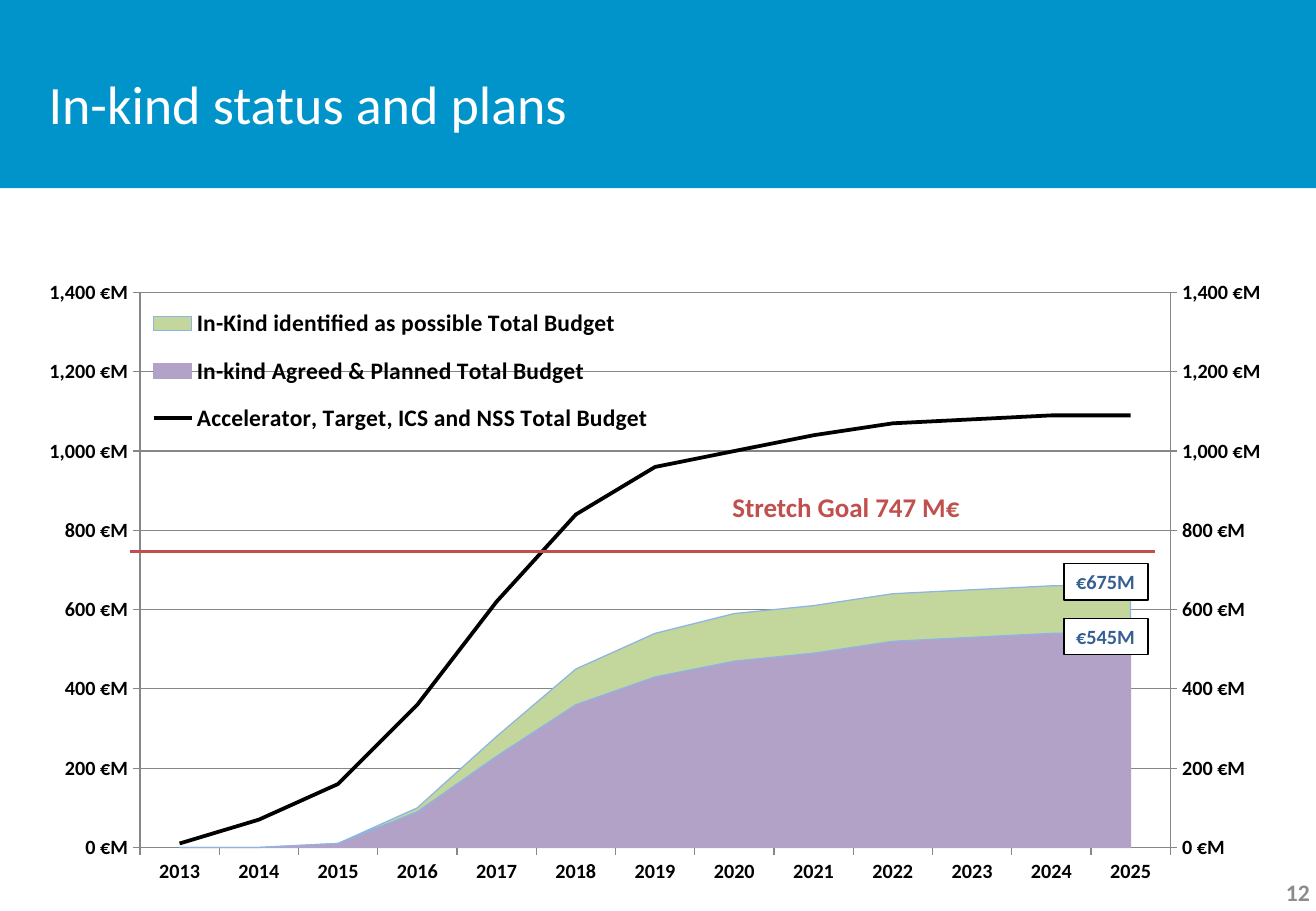
import copy
from dataclasses import dataclass

import pptx
import pptx.chart.data
import pptx.dml.color
import pptx.enum.chart
import pptx.enum.shapes
import pptx.enum.text
import pptx.oxml
import pptx.oxml.ns
import pptx.util

Pt = pptx.util.Pt
Align = pptx.enum.text.PP_ALIGN
Anchor = pptx.enum.text.MSO_ANCHOR
Box = tuple[float, float, float, float]


@dataclass(frozen=True)
class Theme:
    font: str = "Calibri"
    band: str = "0094CA"
    white: str = "FFFFFF"
    black: str = "000000"
    grid: str = "868686"
    number: str = "8C8C8C"
    goal: str = "C0504D"
    label: str = "376092"
    agreed: str = "B3A2C7"
    possible: str = "C3D69B"
    possible_edge: str = "8EB4E3"
    title_size: float = 32
    goal_size: float = 16
    legend_size: float = 14
    small_size: float = 12


THEME = Theme()


@dataclass(frozen=True)
class Note:
    text: str
    box: Box
    size: float
    color: str
    align: Align = Align.LEFT
    anchor: Anchor = Anchor.TOP
    framed: bool = False


@dataclass(frozen=True)
class BudgetSeries:
    name: str
    values: tuple[float | None, ...]
    color: str
    edge: str
    width: float


NOTES = (
    Note("€675M", (630.7, 334.1, 49.7, 21.6), THEME.small_size, THEME.label, framed=True),
    Note("€545M", (630.7, 366.5, 49.7, 21.6), THEME.small_size, THEME.label, framed=True),
    Note("Stretch Goal 747 M€", (427, 287.3, 151.2, 26.6), THEME.goal_size, THEME.goal),
    Note("12", (601.2, 514.1, 182.2, 28.8), THEME.legend_size, THEME.number,
         Align.RIGHT, Anchor.MIDDLE),
)
SERIES = (
    BudgetSeries("In-kind Agreed & Planned Total Budget",
                 (None, 0, 10, 90, 230, 360, 430, 470, 490, 520, 530, 540, 540),
                 THEME.agreed, THEME.agreed, 0.75),
    BudgetSeries("In-Kind identified as possible Total Budget",
                 (None, 0, 0, 10, 50, 90, 110, 120, 120, 120, 120, 120, 120),
                 THEME.possible, THEME.possible_edge, 0.75),
    BudgetSeries("Accelerator, Target, ICS and NSS Total Budget",
                 (10, 70, 160, 360, 620, 840, 960, 1000, 1040, 1070, 1080, 1090, 1090),
                 THEME.black, THEME.black, 2.25),
)


def rgb(color: str) -> pptx.dml.color.RGBColor:
    return pptx.dml.color.RGBColor.from_string(color)


def set_font(font, size: float, color: str, bold: bool = True) -> None:
    font.name, font.size, font.bold = THEME.font, Pt(size), bold
    font.color.rgb = rgb(color)


def chart_xml(tag: str, content: str):
    namespaces = pptx.oxml.ns.nsdecls("c")
    return pptx.oxml.parse_xml(f"<c:{tag} {namespaces}>{content}</c:{tag}>")


def manual_layout(left: float, top: float, width: float, height: float, target: str = ""):
    sizes = f'<c:x val="{left}"/><c:y val="{top}"/><c:w val="{width}"/><c:h val="{height}"/>'
    modes = '<c:xMode val="edge"/><c:yMode val="edge"/>'
    return chart_xml("layout", f"<c:manualLayout>{target}{modes}{sizes}</c:manualLayout>")


def add_title(page) -> None:
    band = page.shapes.add_shape(pptx.enum.shapes.MSO_SHAPE.RECTANGLE, 0, 0, Pt(780), Pt(111.6))
    band.shadow.inherit = False
    band.fill.solid()
    band.fill.fore_color.rgb = rgb(THEME.band)
    band.line.fill.background()
    page.shapes.element.insert(2, band.element)  # behind the title

    title = page.shapes.title
    title.left, title.top, title.width, title.height = map(Pt, (21.6, 15.8, 609.1, 90))
    title.text_frame.text = "In-kind status and plans"
    title.text_frame.vertical_anchor = Anchor.MIDDLE
    para = title.text_frame.paragraphs[0]
    para.alignment = Align.LEFT
    set_font(para.font, THEME.title_size, THEME.white, bold=False)


def add_note(page, note: Note) -> None:
    box = page.shapes.add_textbox(*map(Pt, note.box))
    if note.framed:
        box.fill.solid()
        box.fill.fore_color.rgb = rgb(THEME.white)
        box.line.color.rgb = rgb(THEME.black)
        box.line.width = Pt(0.75)
    frame = box.text_frame
    frame.text = note.text
    frame.word_wrap = note.align == Align.RIGHT
    frame.vertical_anchor = note.anchor
    frame.paragraphs[0].alignment = note.align
    set_font(frame.paragraphs[0].font, note.size, note.color)


def add_goal_line(page) -> None:
    goal = page.shapes.add_connector(
        pptx.enum.shapes.MSO_CONNECTOR.STRAIGHT, *map(Pt, (77, 326.9, 684.7, 326.9)))
    goal.line.color.rgb = rgb(THEME.goal)
    goal.line.width = Pt(2)
    goal.element.spPr.append(
        pptx.oxml.parse_xml(f'<a:effectLst {pptx.oxml.ns.nsdecls("a")}/>'))


def style_axes(chart) -> None:
    values = chart.value_axis
    values.minimum_scale, values.maximum_scale, values.major_unit = 0, 1400, 200
    values.has_major_gridlines = True
    values.major_gridlines.format.line.color.rgb = rgb(THEME.grid)
    values.tick_labels.number_format = '#,##0\\ "€M"'
    values.tick_labels.number_format_is_linked = False
    for axis in (chart.category_axis, values):
        axis.major_tick_mark = pptx.enum.chart.XL_TICK_MARK.OUTSIDE
        axis.minor_tick_mark = pptx.enum.chart.XL_TICK_MARK.NONE
        axis.format.line.color.rgb = rgb(THEME.grid)
        set_font(axis.tick_labels.font, THEME.small_size, THEME.black)


def move_total_to_right_axis(chart) -> None:
    root = chart.element
    area = root.xpath(".//c:areaChart")[0]
    root.xpath(".//c:valAx/c:crossBetween")[0].set("val", "between")
    line = chart_xml("lineChart", '<c:grouping val="standard"/><c:varyColors val="0"/>'
                     '<c:marker val="1"/><c:axId val="5001"/><c:axId val="5002"/>')
    line.insert(2, area.xpath("./c:ser")[-1])
    area.addnext(line)

    # Second pair of axes: hidden categories and values on the right
    categories, values = root.xpath(".//c:catAx")[0], root.xpath(".//c:valAx")[0]
    hidden, right = copy.deepcopy(categories), copy.deepcopy(values)
    values.addnext(hidden)
    hidden.addnext(right)
    for axis, own, other in ((hidden, "5001", "5002"), (right, "5002", "5001")):
        axis.xpath("./c:axId")[0].set("val", own)
        axis.xpath("./c:crossAx")[0].set("val", other)
    hidden.xpath("./c:delete")[0].set("val", "1")
    right.remove(right.xpath("./c:majorGridlines")[0])
    right.xpath("./c:axPos")[0].set("val", "r")
    right.xpath("./c:crosses")[0].set("val", "max")


def add_budget_chart(page) -> None:
    data = pptx.chart.data.CategoryChartData()
    data.categories = [str(year) for year in range(2013, 2026)]
    for series in SERIES:
        data.add_series(series.name, series.values)
    chart = page.shapes.add_chart(pptx.enum.chart.XL_CHART_TYPE.AREA_STACKED,
                                  *map(Pt, (15.1, 116.6, 732.2, 430.6)), data).chart
    chart.has_title = False
    set_font(chart.font, THEME.small_size, THEME.black)
    style_axes(chart)
    move_total_to_right_axis(chart)

    # Series colours
    areas, lines = chart.plots
    areas.vary_by_categories = False
    for drawn, series in zip((*areas.series, *lines.series), SERIES):
        drawn.format.line.color.rgb = rgb(series.edge)
        drawn.format.line.width = Pt(series.width)
    for drawn, series in zip(areas.series, SERIES):
        drawn.format.fill.solid()
        drawn.format.fill.fore_color.rgb = rgb(series.color)
    lines.series[0].smooth = False
    lines.series[0].marker.style = pptx.enum.chart.XL_MARKER_STYLE.NONE

    # Legend over the plot, and the plot's own place
    chart.has_legend = True
    chart.legend.position = pptx.enum.chart.XL_LEGEND_POSITION.RIGHT
    chart.legend.include_in_layout = True
    set_font(chart.legend.font, THEME.legend_size, THEME.black)
    for old in chart.element.xpath(".//c:plotArea/c:layout | .//c:legend/c:layout"):
        old.getparent().remove(old)
    chart.element.xpath(".//c:legendPos")[0].addnext(manual_layout(0.1, 0.13, 0.41, 0.22))
    chart.element.xpath(".//c:plotArea")[0].insert(
        0, manual_layout(0.093, 0.132, 0.837, 0.764, '<c:layoutTarget val="inner"/>'))


def main() -> None:
    deck = pptx.Presentation()
    deck.slide_width, deck.slide_height = Pt(780), Pt(540)
    page = deck.slides.add_slide(deck.slide_layouts[5])
    add_title(page)
    add_budget_chart(page)
    add_goal_line(page)
    for note in NOTES:
        add_note(page, note)
    deck.save("out.pptx")


if __name__ == "__main__":
    main()
